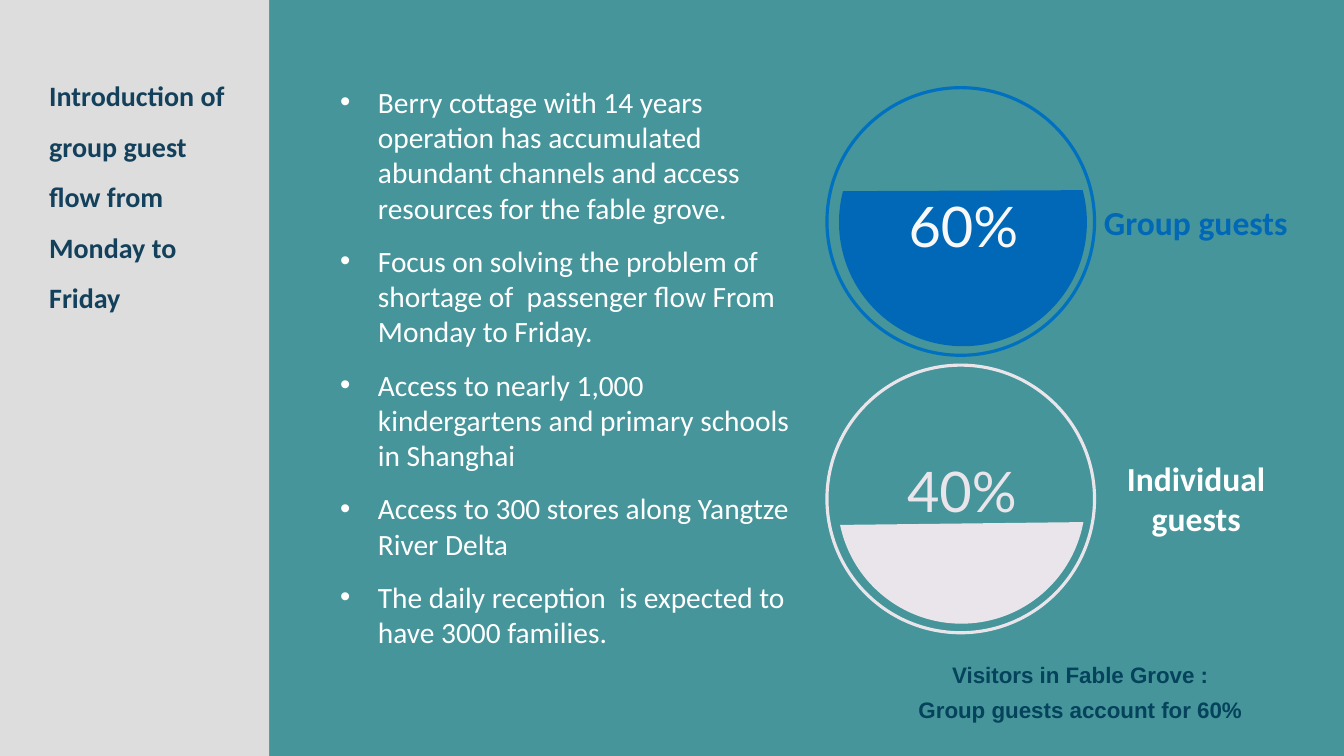
"""Builds the slide on weekday group guest flow."""
from lxml import etree
from pptx import Presentation
from pptx import util as u
from pptx.dml.color import RGBColor
from pptx.enum import shapes, text
from pptx.oxml.ns import qn

TEAL = RGBColor(0x45, 0x95, 0x9A)
GREY = RGBColor(0xDD, 0xDD, 0xDD)
NAVY = RGBColor(0x13, 0x40, 0x5B)
INK = RGBColor(0x05, 0x42, 0x5C)
RING = RGBColor(0x00, 0x70, 0xC0)
BLUE = RGBColor(0x00, 0x68, 0xB6)
PALE = RGBColor(0xEA, 0xE5, 0xEB)
SNOW = RGBColor(0xF8, 0xF8, 0xF8)
WHITE = RGBColor(0xFF, 0xFF, 0xFF)
LEFT, MID = text.PP_ALIGN.LEFT, text.PP_ALIGN.CENTER


def place(item, box):
    item.left, item.top, item.width, item.height = [u.Inches(n) for n in box]


def write(item, lines, size, font, tint, bold=False, align=MID, pitch=1.0, gap=0, mark=None):
    frame = item.text_frame
    frame.auto_size = text.MSO_AUTO_SIZE.NONE
    frame.vertical_anchor = text.MSO_ANCHOR.TOP
    for i, line in enumerate(lines):
        para = frame.add_paragraph() if i else frame.paragraphs[0]
        para.alignment = align
        para.line_spacing = pitch
        para.space_before = u.Pt(gap if i else 0)
        if mark:
            props = para._p.get_or_add_pPr()
            props.set("marL", str(u.Inches(0.5)))
            props.set("indent", str(u.Inches(-0.5)))
            etree.SubElement(props, qn("a:buFont")).set("typeface", "Arial")
            etree.SubElement(props, qn("a:buChar")).set("char", mark)
        run = para.add_run()
        run.text = line
        run.font.size = u.Pt(size)
        run.font.name = font
        run.font.bold = bold
        run.font.color.rgb = tint


deck = Presentation()
deck.slide_width, deck.slide_height = u.Inches(17.78), u.Inches(10)
slide = deck.slides.add_slide(deck.slide_layouts[1])
slide.background.fill.solid()
slide.background.fill.fore_color.rgb = TEAL
parts = slide.shapes

side = parts.add_shape(shapes.MSO_SHAPE.RECTANGLE, 0, 0, u.Inches(3.56), u.Inches(10))
side.shadow.inherit = False
side.fill.solid()
side.fill.fore_color.rgb = GREY
side.line.fill.background()
parts._spTree.insert(2, side._element)

title = parts.title
place(title, (0.58, 0.75, 2.55, 4.1))
frame = title.text_frame
frame.margin_left = frame.margin_right = frame.margin_top = frame.margin_bottom = u.Inches(0.07)
write(title, ["Introduction of group guest", "flow from Monday to Friday"],
      26.7, "Calibri", NAVY, True, LEFT, 1.5)

body = slide.placeholders[1]
place(body, (4.4, 1.06, 6.29, 7.88))
write(body, [
    "Berry cottage with 14 years operation has accumulated abundant channels "
    "and access resources for the fable grove.",
    "Focus on solving the problem of shortage of  passenger flow From Monday to Friday.",
    "Access to nearly 1,000 kindergartens and primary schools in Shanghai",
    "Access to 300 stores along Yangtze River Delta",
    "The daily reception  is expected to have 3000 families.",
], 28, "Calibri", WHITE, align=LEFT, gap=17, mark="•")

gauges = [
    (1.16, RING, (11.1, 1.3), 300, (27, 152.72), BLUE),
    (4.83, PALE, (11.08, 4.97), 313, (34.44, 129.16), PALE),
]
for top, edge, spot, turn, arc, tint in gauges:
    ring = parts.add_shape(shapes.MSO_SHAPE.OVAL, 0, 0, 0, 0)
    place(ring, (10.94, top, 3.54, 3.54))
    ring.shadow.inherit = False
    ring.fill.background()
    ring.line.color.rgb = edge
    ring.line.width = u.Pt(3)
    bowl = parts.add_shape(shapes.MSO_SHAPE.CHORD, 0, 0, 0, 0)
    place(bowl, (*spot, 3.28, 3.28))
    bowl.shadow.inherit = False
    bowl.rotation = turn
    bowl.adjustments[0], bowl.adjustments[1] = arc
    bowl.fill.solid()
    bowl.fill.fore_color.rgb = tint
    bowl.line.fill.background()

labels = [
    ((11.89, 2.48, 1.71, 0.84), ["60%"], 53.3, "Lato", SNOW, False, 1.0, True),
    ((14.19, 2.62, 3.26, 0.64), ["Group guests"], 32, "Calibri", BLUE, True, 1.0, True),
    ((11.87, 5.99, 1.71, 0.8), ["40%"], 53.3, "Lato", PALE, False, 1.0, True),
    ((14.75, 6.01, 2.15, 1.18), ["Individual", "guests"], 32, "Calibri", WHITE, True, 1.0, False),
    ((12.02, 8.59, 4.54, 0.99), ["Visitors in Fable Grove :", "Group guests account for 60%"],
     21.3, "Arial", INK, True, 1.3, False),
]
for box, lines, size, font, tint, bold, pitch, wrap in labels:
    label = parts.add_textbox(0, 0, 0, 0)
    place(label, box)
    label.text_frame.word_wrap = wrap
    write(label, lines, size, font, tint, bold, pitch=pitch)

deck.save("out.pptx")
